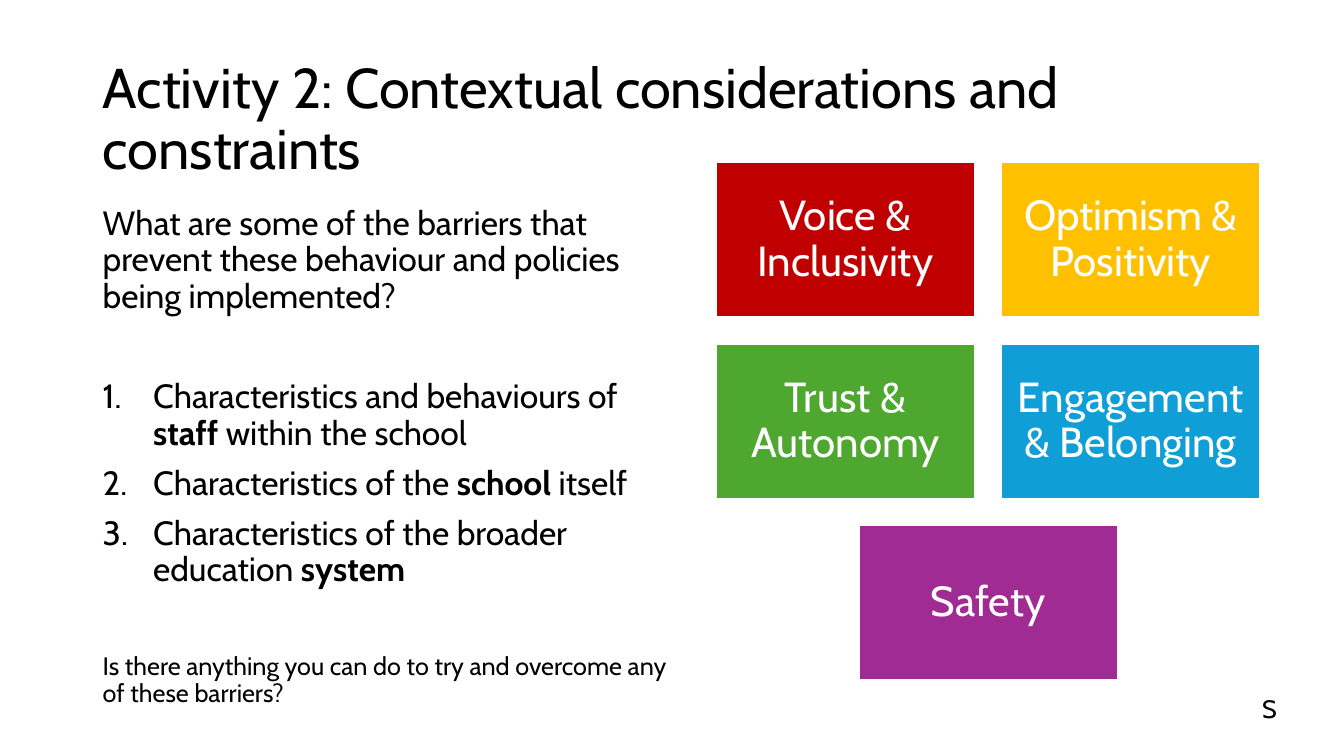
from lxml import etree
from pptx import Presentation
from pptx.dml.color import RGBColor
from pptx.enum.shapes import MSO_SHAPE
from pptx.enum.text import MSO_ANCHOR, MSO_AUTO_SIZE, PP_ALIGN
from pptx.oxml.ns import qn
from pptx.util import Inches, Pt

RECTANGLE = MSO_SHAPE.RECTANGLE
BOTTOM, MIDDLE = MSO_ANCHOR.BOTTOM, MSO_ANCHOR.MIDDLE
LEFT, CENTER = PP_ALIGN.LEFT, PP_ALIGN.CENTER
NO_AUTOFIT = MSO_AUTO_SIZE.NONE


def rgb(value):
    return RGBColor.from_string(value)


def add_text(p, text, size=24, color="000000", bold=False, align=LEFT, spacing=0.9, before=0):
    p.alignment = align
    p.line_spacing = spacing
    p.space_before = Pt(before)
    r = p.add_run()
    r.text = text
    r.font.name = "Cabin"
    r.font.size = Pt(size)
    r.font.bold = bold
    r.font.color.rgb = rgb(color)


prs = Presentation()
prs.slide_width = Inches(13.33)
prs.slide_height = Inches(7.5)
slide = prs.slides.add_slide(prs.slide_layouts[5])

title = slide.shapes.title
title.left, title.top = Inches(0.92), Inches(0.4)
title.width, title.height = Inches(11.5), Inches(1.45)
tf = title.text_frame
tf.auto_size = NO_AUTOFIT
tf.vertical_anchor = BOTTOM
add_text(tf.paragraphs[0], "Activity 2: Contextual considerations and constraints", size=40)

body = slide.shapes.add_textbox(Inches(0.92), Inches(2), Inches(5.98), Inches(4.76))
tf = body.text_frame
tf.word_wrap = True
add_text(
    tf.paragraphs[0],
    "What are some of the barriers that prevent these behaviour and policies being implemented?",
    before=10,
)

barriers = [
    (46, "Characteristics and behaviours of ", "staff", " within the school"),
    (10, "Characteristics of the ", "school", " itself"),
    (10, "Characteristics of the broader education ", "system", ""),
]
for before, lead, keyword, rest in barriers:
    p = tf.add_paragraph()
    add_text(p, lead, before=before)
    add_text(p, keyword, bold=True, before=before)
    if rest:
        add_text(p, rest, before=before)
    pPr = p._p.get_or_add_pPr()
    pPr.set("marL", str(Inches(0.5)))
    pPr.set("indent", str(Inches(-0.5)))
    etree.SubElement(pPr, qn("a:buFont"), typeface="+mj-lt")
    etree.SubElement(pPr, qn("a:buAutoNum"), type="arabicPeriod")

add_text(
    tf.add_paragraph(),
    "Is there anything you can do to try and overcome any of these barriers?",
    size=18,
    before=46,
)

LEFT_EDGE, TOP_EDGE = 7.1, 1.61
COLUMN_STEP, ROW_STEP = 2.83, 1.8
principles = [
    (0, 0, "Voice & Inclusivity", "C00000"),
    (1, 0, "Optimism & Positivity", "FFC000"),
    (0, 1, "Trust & Autonomy", "4EA72E"),
    (1, 1, "Engagement & Belonging", "0F9ED5"),
    (0.5, 2, "Safety", "A02B93"),
]
for column, row, label, color in principles:
    sp = slide.shapes.add_shape(
        RECTANGLE,
        Inches(LEFT_EDGE + column * COLUMN_STEP),
        Inches(TOP_EDGE + row * ROW_STEP),
        Inches(2.57),
        Inches(1.54),
    )
    sp.shadow.inherit = False
    sp.fill.solid()
    sp.fill.fore_color.rgb = rgb(color)
    sp.line.color.rgb = rgb("FFFFFF")
    sp.line.width = Pt(1.5)
    tf = sp.text_frame
    tf.word_wrap = True
    tf.vertical_anchor = MIDDLE
    tf.margin_left = tf.margin_right = tf.margin_top = tf.margin_bottom = Inches(0.12)
    add_text(tf.paragraphs[0], label, size=30, color="FFFFFF", align=CENTER)

initial = slide.shapes.add_textbox(Inches(12.42), Inches(6.83), Inches(0.59), Inches(0.4))
tf = initial.text_frame
tf.word_wrap = True
add_text(tf.paragraphs[0], "S", size=18, spacing=1.0)

prs.save("out.pptx")
